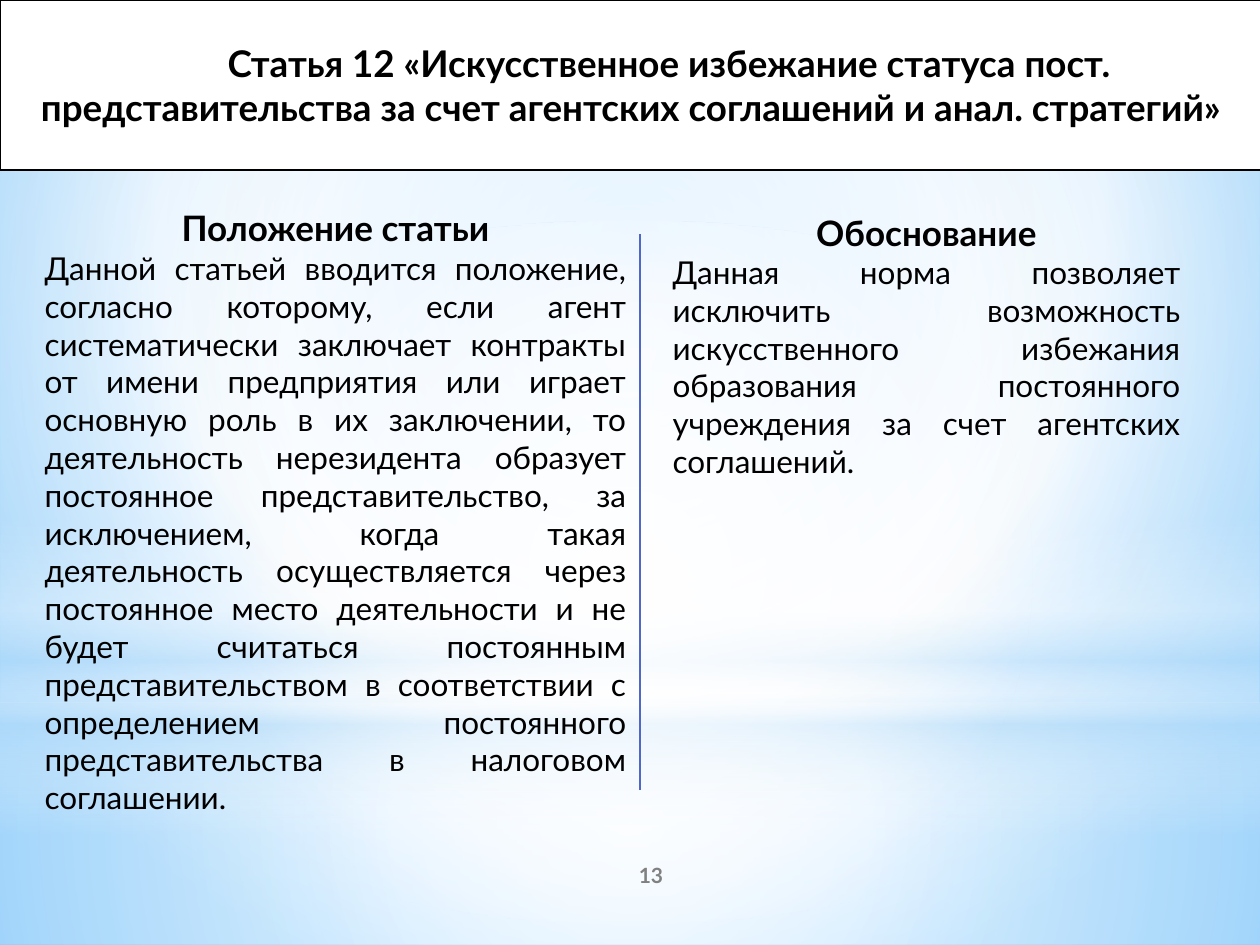
from lxml.etree import SubElement
from pptx import Presentation
from pptx.dml.color import RGBColor
from pptx.enum.shapes import MSO_CONNECTOR, MSO_SHAPE
from pptx.enum.text import MSO_ANCHOR, MSO_AUTO_SIZE, PP_ALIGN
from pptx.oxml.ns import qn
from pptx.util import Emu, Pt

EMU_PER_PX = 914400 / 126
FONT = "Lato"
BLACK = "000000"
WHITE = "FFFFFF"
PALE_BLUE = "B4DCFA"
CENTRE = (50, 50, 50, 50)

HEADING = "Статья 12 «Искусственное избежание статуса пост. представительства за счет агентских соглашений и анал. стратегий»"
PROVISION = (
    "Данной статьей вводится положение, согласно которому, если агент систематически "
    "заключает контракты от имени предприятия или играет основную роль в их заключении, "
    "то деятельность нерезидента образует постоянное представительство, за исключением, "
    "когда такая деятельность осуществляется через постоянное место деятельности и не "
    "будет считаться постоянным представительством в соответствии с определением "
    "постоянного представительства в налоговом соглашении."
)
RATIONALE = (
    "Данная норма позволяет исключить возможность искусственного избежания образования "
    "постоянного учреждения за счет агентских соглашений."
)


def px(length):
    return Emu(round(length * EMU_PER_PX))


def colour(code):
    return RGBColor.from_string(code)


def paint_gradient(fill, holder, stops, focus=None):
    fill.solid()
    solid = holder.find(qn("a:solidFill"))
    gradient = SubElement(holder, qn("a:gradFill"), rotWithShape="1")
    holder.replace(solid, gradient)
    stop_list = SubElement(gradient, qn("a:gsLst"))
    for position, code, opacity in stops:
        stop = SubElement(stop_list, qn("a:gs"), pos=str(position * 1000))
        tint = SubElement(stop, qn("a:srgbClr"), val=code)
        if opacity < 100:
            SubElement(tint, qn("a:alpha"), val=str(opacity * 1000))
    if focus:
        radial = SubElement(gradient, qn("a:path"), path="circle")
        sides = {side: str(share * 1000) for side, share in zip("ltrb", focus)}
        SubElement(radial, qn("a:fillToRect"), **sides)
    else:
        SubElement(gradient, qn("a:lin"), ang="5400000", scaled="0")


def add_glow(slide, preset, top, height, stops, focus=CENTRE):
    glow = slide.shapes.add_shape(preset, px(0), px(top), px(1260), px(height))
    glow.shadow.inherit = False
    glow.line.fill.background()
    paint_gradient(glow.fill, glow.element.spPr, stops, focus)


def place(holder, left, top, width, height):
    holder.left, holder.top = px(left), px(top)
    holder.width, holder.height = px(width), px(height)
    tree = holder.element.getparent()
    tree.append(holder.element)
    frame = holder.text_frame
    frame.word_wrap = True
    frame.auto_size = MSO_AUTO_SIZE.NONE
    frame.vertical_anchor = MSO_ANCHOR.MIDDLE
    return frame


def write(paragraph, text, size, bold=True, align=PP_ALIGN.CENTER, code=BLACK, indent=0):
    paragraph.alignment = align
    paragraph.space_before = Pt(0)
    properties = paragraph._p.get_or_add_pPr()
    properties.set("marL", "0")
    properties.set("indent", str(px(indent)))
    SubElement(properties, qn("a:buNone"))
    run = paragraph.add_run()
    run.text = text
    run.font.name = FONT
    run.font.size = Pt(size)
    run.font.bold = bold
    run.font.color.rgb = colour(code)


def fill_title(title):
    frame = place(title, 0, 0, 1262, 170)
    title.fill.solid()
    title.fill.fore_color.rgb = colour(WHITE)
    title.line.color.rgb = colour(BLACK)
    title.line.width = Pt(1.25)
    write(frame.paragraphs[0], HEADING, 21, indent=76)


def fill_column(column, box, caption, body):
    frame = place(column, *box)
    write(frame.paragraphs[0], caption, 20)
    write(frame.add_paragraph(), body, 18, bold=False, align=PP_ALIGN.JUSTIFY)


def add_divider(slide):
    divider = slide.shapes.add_connector(
        MSO_CONNECTOR.STRAIGHT, px(640), px(234), px(640), px(790)
    )
    divider.line.color.rgb = colour("4E67C8")
    divider.line.width = Pt(0.75)
    SubElement(divider.element.spPr, qn("a:effectLst"))


def add_page_number(slide):
    number = slide.shapes.add_textbox(px(525), px(850), px(252), px(50))
    frame = place(number, 525, 850, 252, 50)
    write(frame.paragraphs[0], "13", 12, code="808080")


def add_backdrop(slide):
    background_fill = slide.background.fill
    background_fill.solid()
    paint_gradient(
        background_fill,
        slide.element.find(".//" + qn("p:bgPr")),
        [(0, "9ED5FF", 100), (60, WHITE, 100), (100, "5BB9FF", 100)],
        (20, 10, 20, 60),
    )
    add_glow(slide, MSO_SHAPE.RECTANGLE, 703, 242,
             [(0, WHITE, 91), (37, WHITE, 76), (100, PALE_BLUE, 79)])
    add_glow(slide, MSO_SHAPE.RECTANGLE, 0, 703,
             [(0, WHITE, 89), (48, WHITE, 62), (100, PALE_BLUE, 79)])
    add_glow(slide, MSO_SHAPE.RECTANGLE, 519, 315,
             [(0, WHITE, 0), (29, WHITE, 30), (45, PALE_BLUE, 40),
              (55, WHITE, 26), (65, PALE_BLUE, 60), (100, WHITE, 0)], focus=None)
    add_glow(slide, MSO_SHAPE.OVAL, 221, 703, [(0, WHITE, 100), (56, WHITE, 0)])


def main():
    presentation = Presentation()
    presentation.slide_width, presentation.slide_height = px(1260), px(945)
    slide = presentation.slides.add_slide(presentation.slide_layouts[3])
    title, provision, rationale = list(slide.placeholders)
    add_backdrop(slide)
    fill_title(title)
    fill_column(provision, (32, 170, 607, 683), "Положение статьи", PROVISION)
    fill_column(rationale, (660, 179, 533, 333), "Обоснование", RATIONALE)
    add_divider(slide)
    add_page_number(slide)
    presentation.save("out.pptx")


if __name__ == "__main__":
    main()
